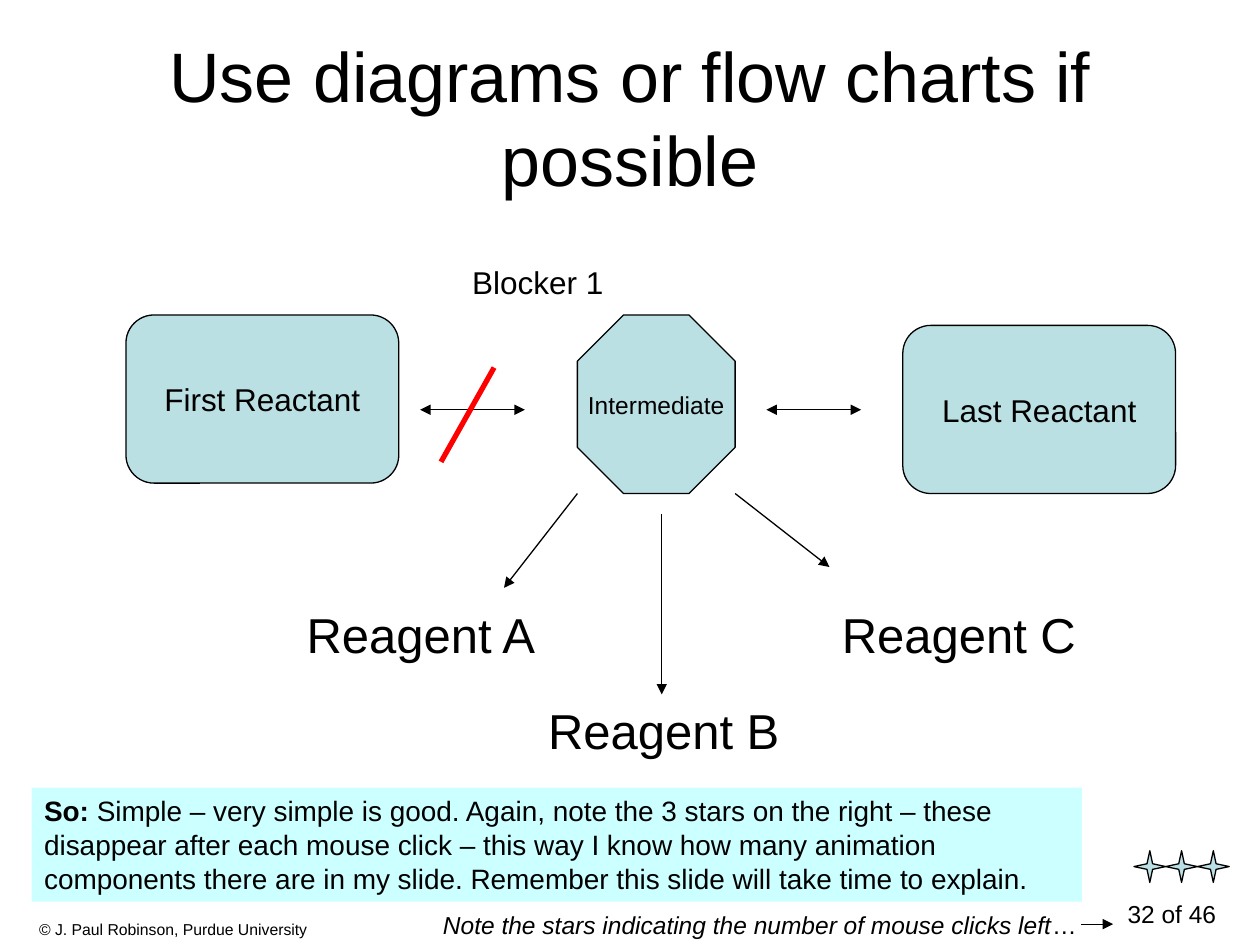
"""Builds a slide with a reaction flow diagram, its reagents and a click counter of stars."""
from pptx import Presentation
from pptx import util as u
from pptx.dml.color import RGBColor
from pptx.enum import shapes, text
from pptx.oxml import ns
from lxml import etree

BLACK = RGBColor(0x00, 0x00, 0x00)
RED = RGBColor(0xFF, 0x00, 0x00)
TEAL = RGBColor(0xBB, 0xE0, 0xE3)
CYAN = RGBColor(0xCC, 0xFF, 0xFF)
SHAPE = shapes.MSO_SHAPE
LEFT, CENTER, RIGHT = text.PP_ALIGN.LEFT, text.PP_ALIGN.CENTER, text.PP_ALIGN.RIGHT
TOP, MIDDLE = text.MSO_ANCHOR.TOP, text.MSO_ANCHOR.MIDDLE


def write(box, runs, size, align=LEFT, anchor=TOP, wrap=False):
    frame = box.text_frame
    frame.word_wrap = wrap
    frame.auto_size = text.MSO_AUTO_SIZE.NONE
    frame.vertical_anchor = anchor
    para = frame.paragraphs[0]
    para.alignment = align
    for words, bold, italic in runs:
        span = para.add_run()
        span.text = words
        span.font.name = "Arial"
        span.font.size = u.Pt(size)
        span.font.bold = bold
        span.font.italic = italic
        span.font.color.rgb = BLACK


def add_filled(kind, left, top, width, height, color):
    shape = page.shapes.add_shape(kind, u.Cm(left), u.Cm(top), u.Cm(width), u.Cm(height))
    shape.shadow.inherit = False
    shape.fill.solid()
    shape.fill.fore_color.rgb = color
    shape.line.color.rgb = BLACK
    shape.line.width = u.Pt(0.75)
    return shape


deck = Presentation()
deck.slide_width, deck.slide_height = u.Cm(25.4), u.Cm(19.05)
page = deck.slides.add_slide(deck.slide_layouts[5])

title = page.shapes.title
title.left, title.top, title.width, title.height = u.Cm(1.27), u.Cm(0.76), u.Cm(22.86), u.Cm(3.18)
write(title, [("Use diagrams or flow charts if possible", False, False)], 40, CENTER, MIDDLE, True)

for kind, words, size, left, top, width, height in (
    (SHAPE.ROUNDED_RECTANGLE, "First Reactant", 18, 2.54, 6.35, 5.5, 3.39),
    (SHAPE.OCTAGON, "Intermediate", 14, 11.64, 6.35, 3.18, 3.6),
    (SHAPE.ROUNDED_RECTANGLE, "Last Reactant", 18, 18.2, 6.56, 5.5, 3.39),
):
    stage = add_filled(kind, left, top, width, height, TEAL)
    write(stage, [(words, False, False)], size, CENTER, MIDDLE)

for start_x, start_y, end_x, end_y, color, weight, ends in (
    (8.47, 8.26, 10.58, 8.26, BLACK, 0.75, ("headEnd", "tailEnd")),
    (15.45, 8.26, 17.36, 8.26, BLACK, 0.75, ("headEnd", "tailEnd")),
    (11.64, 9.95, 10.16, 11.85, BLACK, 0.75, ("tailEnd",)),
    (13.34, 10.37, 13.34, 14, BLACK, 0.75, ("tailEnd",)),
    (14.82, 9.95, 16.72, 11.43, BLACK, 0.75, ("tailEnd",)),
    (9.96, 7.41, 8.89, 9.31, RED, 3, ()),
    (21.8, 18.63, 22.44, 18.63, BLACK, 0.75, ("tailEnd",)),
):
    arrow = page.shapes.add_connector(
        shapes.MSO_CONNECTOR.STRAIGHT, u.Cm(start_x), u.Cm(start_y), u.Cm(end_x), u.Cm(end_y))
    arrow.line.color.rgb = color
    arrow.line.width = u.Pt(weight)
    for end in ends:
        etree.SubElement(arrow.line._get_or_add_ln(), ns.qn("a:" + end), type="triangle")
    etree.SubElement(arrow._element.spPr, ns.qn("a:effectLst"))

for words, size, align, italic, left, top, width, height in (
    ("Reagent A", 28, LEFT, False, 5.93, 12.07, 5.18, 1.44),
    ("Reagent B", 28, LEFT, False, 10.8, 14, 5.18, 1.25),
    ("Reagent C", 28, LEFT, False, 16.72, 12.07, 5.23, 1.44),
    ("Blocker 1", 18, LEFT, False, 9.27, 5.18, 3.15, 1.02),
    ("Note the stars indicating the number of mouse clicks left", 14, LEFT, True,
     8.68, 18.22, 13.36, 0.85),
    ("© J. Paul Robinson, Purdue University", 9, CENTER, False, 0, 18.42, 6.98, 0.46),
    ("32 of 46", 14, RIGHT, False, 18.85, 17.99, 5.92, 0.84),
):
    label = page.shapes.add_textbox(u.Cm(left), u.Cm(top), u.Cm(width), u.Cm(height))
    runs = [(words, False, italic)]
    if italic:
        runs.append(("…", False, False))
    write(label, runs, size, align, wrap=align != LEFT)

note = add_filled(SHAPE.RECTANGLE, 0.64, 15.88, 21.17, 2.3, CYAN)
note.line.fill.background()
write(note, [
    ("So:", True, False),
    (" Simple – very simple is good. Again, note the 3 stars on the right – these disappear "
     "after each mouse click – this way I know how many animation components there are in my "
     "slide. Remember this slide will take time to explain.", False, False),
], 16, wrap=True)

for index in range(3):
    add_filled(SHAPE.STAR_4_POINT, 22.86 + 0.64 * index, 17.15, 0.64, 0.64, TEAL)

deck.save("out.pptx")
